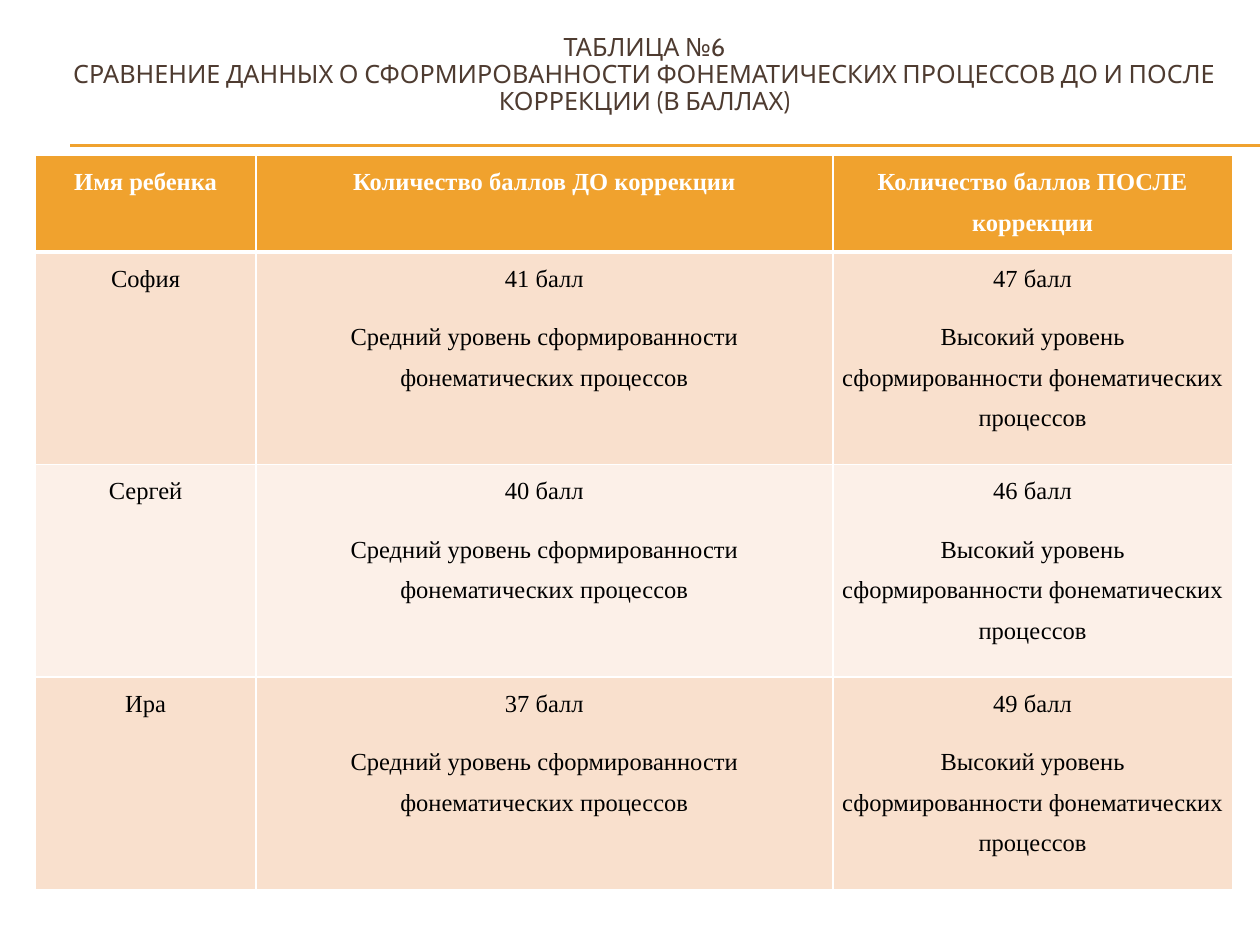
"""Build a slide with a table comparing scores before and after correction."""
from lxml import etree
from pptx import Presentation
from pptx import util as u
from pptx.dml.color import RGBColor
from pptx.enum import shapes, text
from pptx.oxml.ns import qn

TITLE = ["ТАБЛИЦА №6",
         "СРАВНЕНИЕ ДАННЫХ О СФОРМИРОВАННОСТИ ФОНЕМАТИЧЕСКИХ ПРОЦЕССОВ ДО И ПОСЛЕ КОРРЕКЦИИ (В БАЛЛАХ)"]
HEADER = ["Имя ребенка", "Количество баллов ДО коррекции", "Количество баллов ПОСЛЕ коррекции"]
SCORES = [("София", 41, 47), ("Сергей", 40, 46), ("Ира", 37, 49)]
LEVELS = ["Средний", "Высокий"]
LEVEL_TEXT = "{} уровень сформированности фонематических процессов"
COLORS = {"accent": "F0A22E", "title": "4E3B30", "white": "FFFFFF", "black": "000000",
          "odd": "F9E0CD", "even": "FCF0E8"}
COL_WIDTHS = [126, 329.76, 228.24]
ROW_HEIGHTS = [55.4] + [121.5] * len(SCORES)
RULES_Y = [82.8, 83.4]


def rgb(name):
    return RGBColor.from_string(COLORS[name])


def add_run(p, content, font, size, color, bold=False):
    r = p.add_run()
    r.text = content
    r.font.name, r.font.size, r.font.bold = font, u.Pt(size), bold
    r.font.color.rgb = rgb(color)


def add_rule(s, y):
    ln = s.shapes.add_connector(shapes.MSO_CONNECTOR.STRAIGHT, u.Pt(40.3), u.Pt(y), u.Pt(720), u.Pt(y))
    ln.line.color.rgb = rgb("accent")
    ln.line.width = u.Pt(0.75)
    etree.SubElement(ln._element.spPr, qn("a:effectLst"))


def add_title(s):
    tf = s.shapes.add_textbox(u.Pt(31), u.Pt(15), u.Pt(674.6), u.Pt(73.4)).text_frame
    tf.word_wrap = True
    tf.vertical_anchor = text.MSO_ANCHOR.MIDDLE
    tf.margin_bottom = u.Pt(20.6)
    p = tf.paragraphs[0]
    p.alignment = text.PP_ALIGN.CENTER
    p.line_spacing = 0.88
    for i, line in enumerate(TITLE):
        if i:
            p.add_line_break()
        add_run(p, line, "Cabin", 14.4, "title")


def set_borders(cell, widths):
    tc_pr = cell._tc.get_or_add_tcPr()
    for side, width in widths.items():
        ln = etree.SubElement(tc_pr, qn("a:ln" + side), w=str(u.Pt(width)))
        fill = etree.SubElement(ln, qn("a:solidFill"))
        etree.SubElement(fill, qn("a:srgbClr"), val=COLORS["white"])


def fill_cell(cell, lines, row):
    header = row == 0
    set_borders(cell, {"L": 1, "R": 1, "T": 3 if row == 1 else 1, "B": 3 if header else 1})
    cell.fill.solid()
    cell.fill.fore_color.rgb = rgb("accent" if header else "odd" if row % 2 else "even")
    cell.margin_left = cell.margin_right = u.Pt(5)
    cell.margin_top = cell.margin_bottom = 0
    tf = cell.text_frame
    for i, line in enumerate(lines):
        p = tf.add_paragraph() if i else tf.paragraphs[0]
        p.alignment = text.PP_ALIGN.CENTER
        p.line_spacing, p.space_after = 1.5, u.Pt(10)
        add_run(p, line, "Times New Roman", 14, "white" if header else "black", header)


def add_scores(s):
    rows = [[[h] for h in HEADER]]
    for name, *points in SCORES:
        rows.append([[name]] + [[f"{n} балл", LEVEL_TEXT.format(level)]
                                for n, level in zip(points, LEVELS)])
    table = s.shapes.add_table(len(rows), len(HEADER), u.Pt(20.2), u.Pt(88.6),
                               u.Pt(sum(COL_WIDTHS)), u.Pt(sum(ROW_HEIGHTS))).table
    for col, width in zip(table.columns, COL_WIDTHS):
        col.width = u.Pt(width)
    for i, (row, height) in enumerate(zip(rows, ROW_HEIGHTS)):
        table.rows[i].height = u.Pt(height)
        for j, lines in enumerate(row):
            fill_cell(table.cell(i, j), lines, i)


def main():
    prs = Presentation()
    prs.slide_width, prs.slide_height = u.Pt(720), u.Pt(540)
    s = prs.slides.add_slide(prs.slide_layouts[6])
    for y in RULES_Y:
        add_rule(s, y)
    add_title(s)
    add_scores(s)
    prs.save("out.pptx")


if __name__ == "__main__":
    main()
